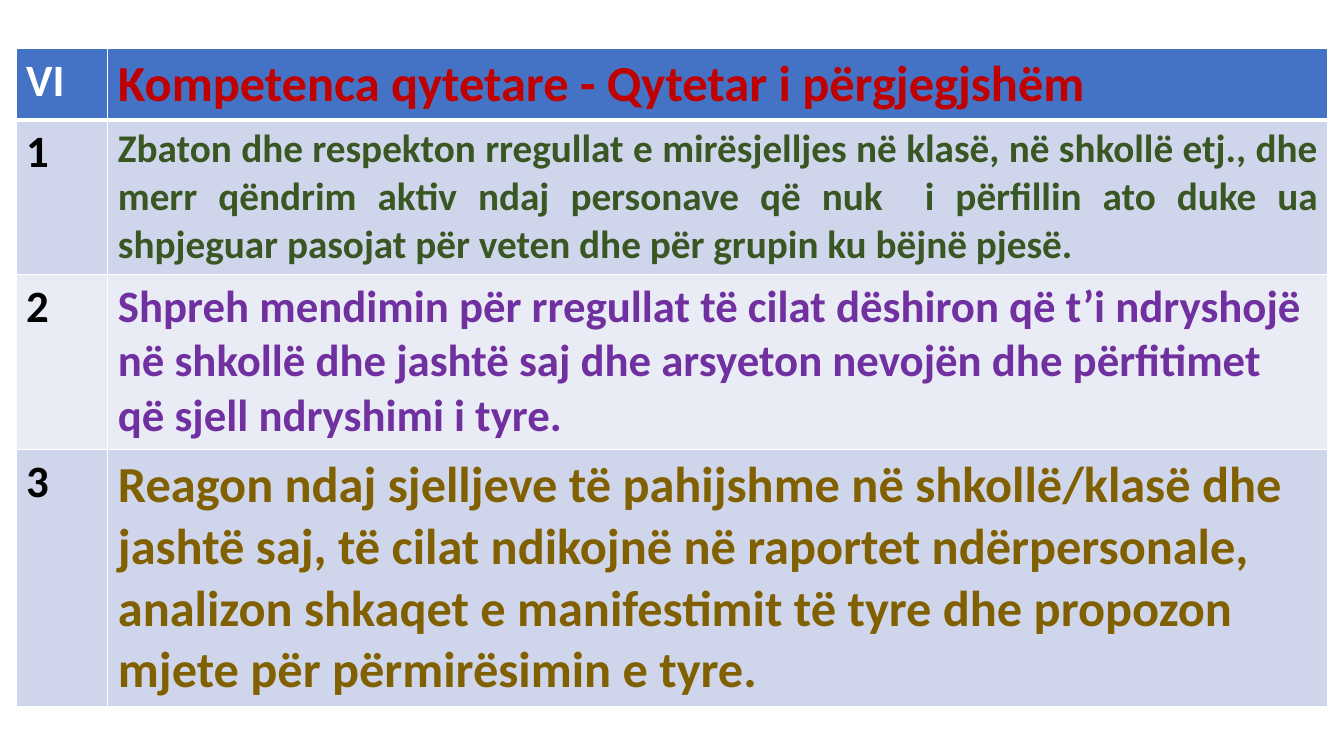
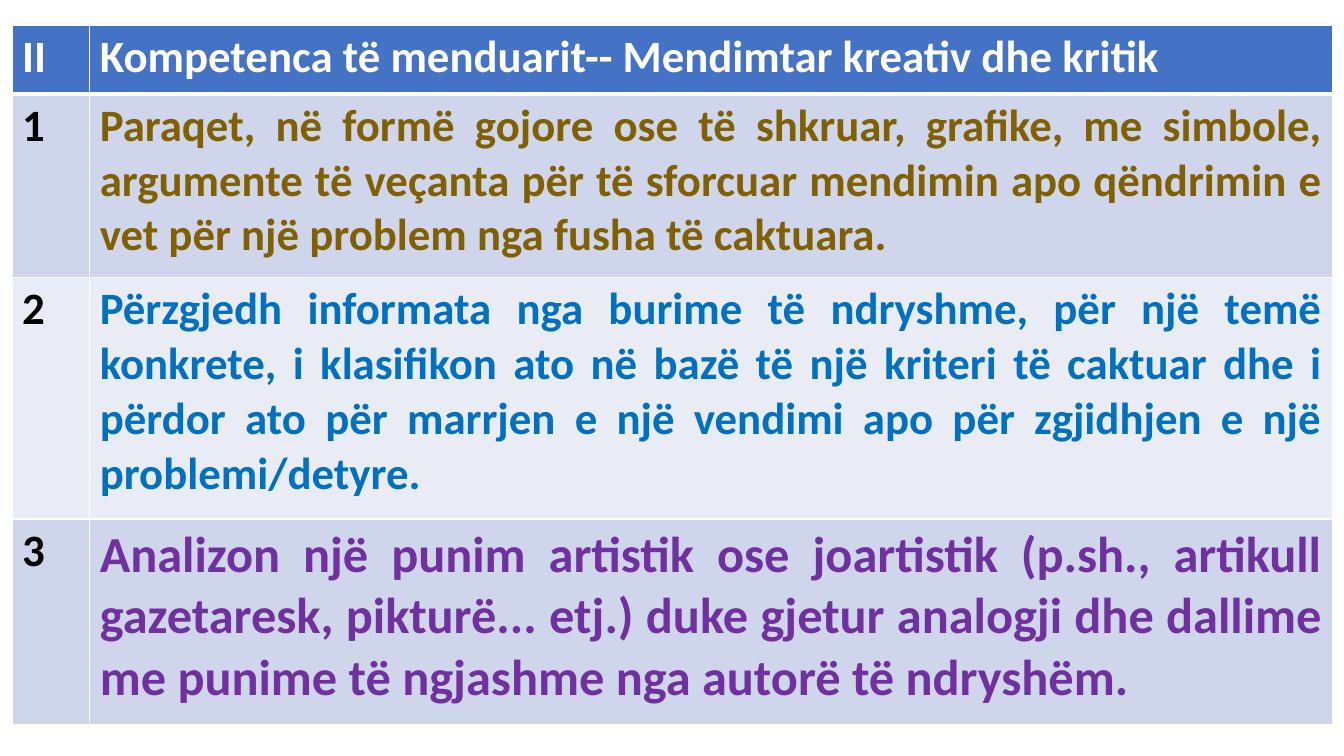
import dataclasses

import lxml.etree
import pptx
import pptx.dml.color
import pptx.enum.text
import pptx.oxml.ns
import pptx.util

Inches = pptx.util.Inches
JUSTIFY = pptx.enum.text.PP_ALIGN.JUSTIFY
LEFT = pptx.enum.text.PP_ALIGN.LEFT


@dataclasses.dataclass(frozen=True)
class Theme:
    font: str = "Calibri"
    small: int = 28
    medium: int = 32
    large: int = 36
    white: str = "FFFFFF"
    black: str = "000000"
    red: str = "C00000"
    green: str = "385723"
    purple: str = "7030A0"
    brown: str = "806000"
    blue: str = "0070C0"
    header_fill: str = "4472C4"
    band_fills: tuple = ("CFD5EA", "E9EBF5")
    thin_line: int = 1
    header_line: int = 3


THEME = Theme()


@dataclasses.dataclass(frozen=True)
class Entry:
    """One table row: its number and its formatted statement."""
    number: str
    text: str
    height: float
    color: str
    size: int = THEME.medium
    align: int = LEFT


CIVIC_COMPETENCE = (
    Entry("VI", "Kompetenca qytetare - Qytetar i përgjegjshëm",
          0.71, THEME.red, THEME.large),
    Entry("1", "Zbaton dhe respekton rregullat e mirësjelljes në klasë, në shkollë etj., "
          "dhe merr qëndrim aktiv ndaj personave që nuk  i përfillin ato duke ua "
          "shpjeguar pasojat për veten dhe për grupin ku bëjnë pjesë. ",
          1.53, THEME.green, THEME.small, JUSTIFY),
    Entry("2", "Shpreh mendimin për rregullat të cilat dëshiron që t’i ndryshojë në "
          "shkollë dhe jashtë saj dhe arsyeton nevojën dhe përfitimet që sjell "
          "ndryshimi i tyre.",
          1.74, THEME.purple),
    Entry("3", "Reagon ndaj sjelljeve të pahijshme në shkollë/klasë dhe jashtë saj, të "
          "cilat ndikojnë në raportet ndërpersonale, analizon shkaqet e manifestimit "
          "të tyre dhe propozon mjete për përmirësimin e tyre.",
          2.55, THEME.brown, THEME.large),
)

THINKING_COMPETENCE = (
    Entry("II", "Kompetenca të menduarit-- Mendimtar kreativ dhe kritik",
          0.68, THEME.white),
    Entry("1", "Paraqet, në formë gojore ose të shkruar, grafike, me simbole, argumente "
          "të veçanta për të sforcuar mendimin apo qëndrimin e vet për një problem "
          "nga fusha të caktuara.",
          1.82, THEME.brown, align=JUSTIFY),
    Entry("2", "Përzgjedh informata nga burime të ndryshme, për një temë konkrete, i "
          "klasifikon ato në bazë të një kriteri të caktuar dhe i përdor ato për "
          "marrjen e një vendimi apo për zgjidhjen e një problemi/detyre.",
          2.4, THEME.blue, align=JUSTIFY),
    Entry("3", "Analizon një punim artistik ose joartistik (p.sh., artikull gazetaresk, "
          "pikturë... etj.) duke gjetur analogji dhe dallime me punime të ngjashme "
          "nga autorë të ndryshëm.",
          2.04, THEME.purple, THEME.large, JUSTIFY),
)


def rgb(value):
    return pptx.dml.color.RGBColor.from_string(value)


def set_borders(cell, widths):
    """Draw white borders; widths maps a side (L, R, T, B) to points."""
    qualified = pptx.oxml.ns.qn
    properties = cell._tc.get_or_add_tcPr()
    for side, width in widths.items():
        line = lxml.etree.SubElement(properties, qualified(f"a:ln{side}"),
                                     w=str(pptx.util.Pt(width)))
        fill = lxml.etree.SubElement(line, qualified("a:solidFill"))
        lxml.etree.SubElement(fill, qualified("a:srgbClr"), val=THEME.white)


def write_text(cell, text, color, size, align=LEFT):
    para = cell.text_frame.paragraphs[0]
    para.alignment = align
    span = para.add_run()
    span.text = text
    font_format = {"name": THEME.font, "size": pptx.util.Pt(size), "bold": True}
    for name, value in font_format.items():
        setattr(span.font, name, value)
    span.font.color.rgb = rgb(color)


def style_cell(cell, row_index):
    """Apply the header or band fill, with a heavy line below the header."""
    is_header = row_index == 0
    set_borders(cell, {
        "L": THEME.thin_line,
        "R": THEME.thin_line,
        "T": THEME.header_line if row_index == 1 else THEME.thin_line,
        "B": THEME.header_line if is_header else THEME.thin_line,
    })
    cell.fill.solid()
    band = THEME.band_fills[(row_index - 1) % len(THEME.band_fills)]
    cell.fill.fore_color.rgb = rgb(THEME.header_fill if is_header else band)


def add_competence_table(page, left, top, column_widths, entries):
    height = sum(entry.height for entry in entries)
    table = page.shapes.add_table(
        len(entries), len(column_widths), Inches(left), Inches(top),
        Inches(sum(column_widths)), Inches(height)).table
    for column, width in zip(table.columns, column_widths):
        column.width = Inches(width)
    for row_index, entry in enumerate(entries):
        row = table.rows[row_index]
        row.height = Inches(entry.height)
        number_cell, statement_cell = row.cells
        number_color = THEME.white if row_index == 0 else THEME.black
        write_text(number_cell, entry.number, number_color, THEME.medium)
        write_text(statement_cell, entry.text, entry.color, entry.size, entry.align)
        for cell in row.cells:
            style_cell(cell, row_index)


def add_page(deck):
    blank_layout = deck.slide_layouts[6]
    return deck.slides.add_slide(blank_layout)


def main():
    deck = pptx.Presentation()
    deck.slide_width, deck.slide_height = Inches(13.33), Inches(7.5)
    add_competence_table(add_page(deck), 0.16, 0.48, (0.91, 12.1), CIVIC_COMPETENCE)
    add_competence_table(add_page(deck), 0.12, 0.25, (0.77, 12.33), THINKING_COMPETENCE)
    deck.save("out.pptx")


if __name__ == "__main__":
    main()
